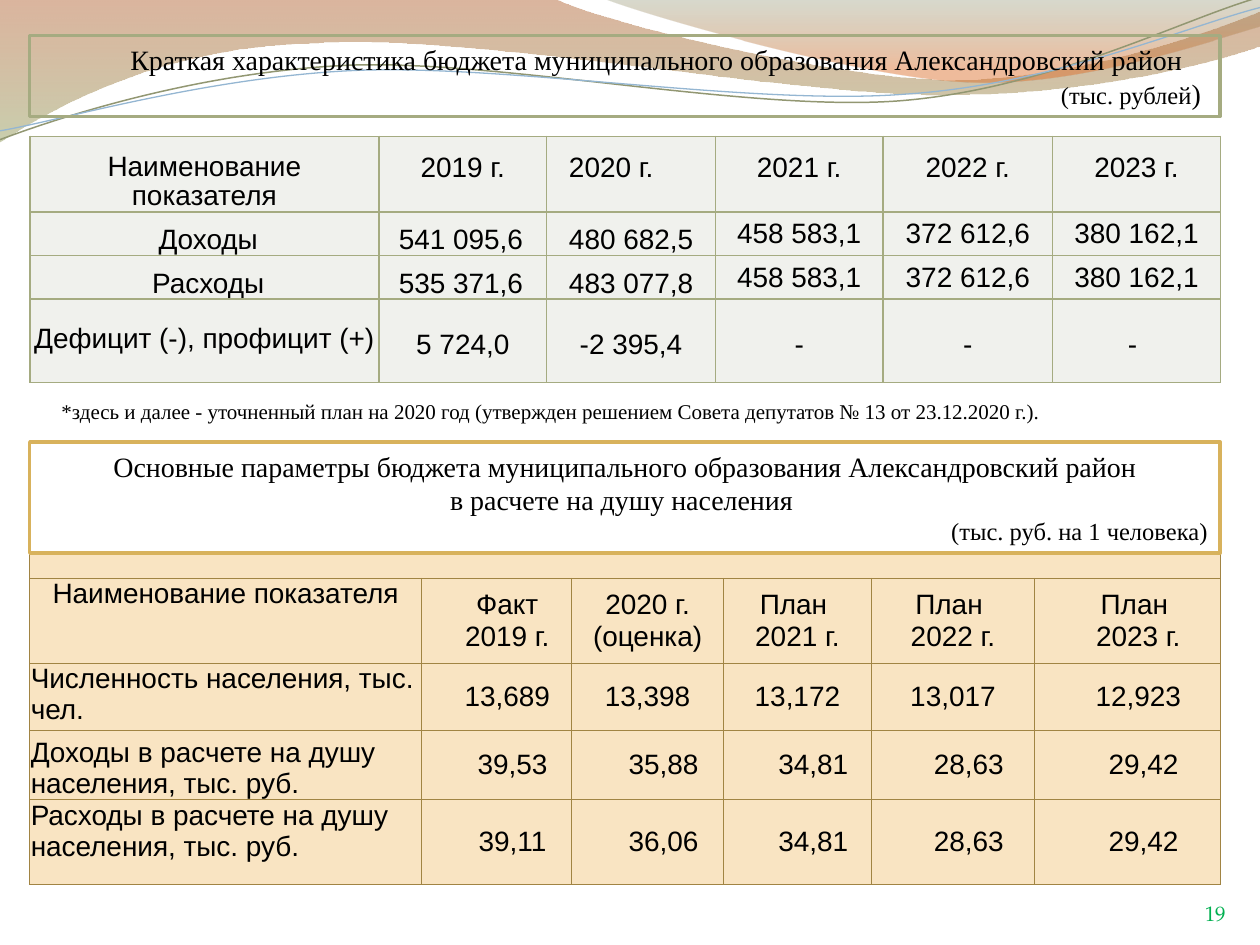
"""Builds the slide on the key budget figures of the Aleksandrovsky district."""
from lxml.etree import SubElement
from pptx import Presentation
from pptx.dml.color import RGBColor
from pptx.enum.shapes import MSO_SHAPE
from pptx.enum.text import MSO_ANCHOR, PP_ALIGN
from pptx.oxml.ns import qn
from pptx.util import Cm, Pt

BLACK = RGBColor(0x00, 0x00, 0x00)
WHITE = RGBColor(0xFF, 0xFF, 0xFF)
NUMBER_GREEN = RGBColor(0x00, 0xB0, 0x50)
SAGE = RGBColor(0xA5, 0xAB, 0x81)
SAGE_PALE = RGBColor(0xF0, 0xF1, 0xED)
GOLD = RGBColor(0xD8, 0xB2, 0x5C)
GOLD_DARK = RGBColor(0xA1, 0x84, 0x43)
GOLD_PALE = RGBColor(0xF9, 0xE4, 0xC2)
RUST = RGBColor(0xAF, 0x5C, 0x29)
MOSS = RGBColor(0x9D, 0xA6, 0x6B)
OLIVE = RGBColor(0x7D, 0x83, 0x5B)
ORANGE = RGBColor(0xDD, 0x6B, 0x24)
OLIVE_LINE = RGBColor(0x92, 0x97, 0x72)
BLUE_LINE = RGBColor(0x94, 0xB6, 0xD2)
SERIF = "Times New Roman"
LEFT, WIDTH = 0.6, 24.0


def write(frame, text, size=16, font="Arial", color=BLACK, align=PP_ALIGN.CENTER,
          indent=0, spacing=None, before=0, same_line=False):
    paragraph = frame.paragraphs[-1]
    if paragraph.runs and not same_line:
        paragraph = frame.add_paragraph()
        paragraph.space_before = Pt(before)
    paragraph.alignment = align
    paragraph.line_spacing = Pt(spacing) if spacing else None
    paragraph._p.get_or_add_pPr().set("marL", str(Cm(indent)))
    run = paragraph.add_run()
    run.text = text
    run.font.size, run.font.name = Pt(size), font
    run.font.color.rgb = color


def add_grid(top, widths, heights, border, border_width, fill):
    grid = slide.shapes.add_table(len(heights), len(widths), Cm(LEFT), Cm(top),
                                  Cm(sum(widths)), Cm(sum(heights))).table
    grid.first_row = grid.horz_banding = False
    for column, width in zip(grid.columns, widths):
        column.width = Cm(width)
    for row, height in zip(grid.rows, heights):
        row.height = Cm(height)
    for cell in grid.iter_cells():
        cell.margin_left = cell.margin_right = Cm(0.02)
        cell.margin_top = cell.margin_bottom = 0
        cell.vertical_anchor = MSO_ANCHOR.MIDDLE
        for side in ("a:lnL", "a:lnR", "a:lnT", "a:lnB"):
            edge = SubElement(cell._tc.get_or_add_tcPr(), qn(side), w=str(Pt(border_width)))
            SubElement(SubElement(edge, qn("a:solidFill")), qn("a:srgbClr"), val=str(border))
        cell.fill.solid()
        cell.fill.fore_color.rgb = fill
    return grid


presentation = Presentation()
presentation.slide_width, presentation.slide_height = Cm(25.4), Cm(19.05)
slide = presentation.slides.add_slide(presentation.slide_layouts[6])

waves = [
    ([(0, 0), (11.18, -0.03), (12.09, 0.43, 16.87, 1.6, 19.25, 1.6),
      (21.67, 1.6, 24.33, 0.66, 25.4, 0.23), (25.43, 0.91),
      (24.97, 1.12, 22.1, 1.93, 18.95, 1.91), (15.8, 1.91, 9.7, 0.71, 6.53, 0.86),
      (3.28, 0.91, 1.17, 2.11, -0.03, 2.87), (0, 0)],
     [(0, RUST, 45), (1, MOSS, 55)], None, 0),
    ([(12.17, -0.03), (12.93, 0.28, 17.32, 1.57, 19.53, 1.65),
      (21.74, 1.75, 24.41, 0.81, 25.4, 0.53), (25.4, 0), (12.17, -0.03)],
     [(0, OLIVE, 30), (0.8, ORANGE, 45)], None, 0),
    ([(-0.06, 2.22), (1.17, 1.82, 4.01, 1.04, 7.04, 1.05),
      (10.05, 1.07, 15.02, 2.37, 18.08, 2.29), (21.13, 2.2, 23.88, 0.91, 25.43, 0.55)],
     None, OLIVE_LINE, 0.85),
    ([(-0.05, 2.04), (1.14, 1.9, 4.17, 1.15, 7.19, 1.16),
      (10.24, 1.18, 15.14, 2.25, 18.19, 2.16), (21.23, 2.11, 23.95, 1.06, 25.46, 0.75)],
     None, BLUE_LINE, 0.75),
]
for segments, stops, line_color, line_width in waves:
    points = [(Cm(segment[i]), Cm(segment[i + 1]))
              for segment in segments for i in range(0, len(segment), 2)]
    builder = slide.shapes.build_freeform(*points[0])
    builder.add_line_segments(points[1:], close=bool(stops))
    wave = builder.convert_to_shape()
    straight_lines = iter(list(wave._element.iter(qn("a:lnTo"))))
    for segment in segments[1:]:
        curve = next(straight_lines)
        if len(segment) == 6:
            curve.tag = qn("a:cubicBezTo")
            for _ in range(2):
                following = next(straight_lines)
                curve.append(following[0])
                following.getparent().remove(following)
    wave.shadow.inherit = False
    if stops:
        wave.line.fill.background()
        wave.fill.gradient()
        wave.fill.gradient_angle = 270
        for stop, (position, color, opacity) in zip(wave.fill.gradient_stops, stops):
            stop.position, stop.color.rgb = position, color
            tint = stop._gs.find(qn("a:srgbClr"))
            SubElement(tint, qn("a:alpha"), val=str(opacity * 1000))
    else:
        wave.rotation = 357.3
        wave.fill.background()
        wave.line.color.rgb, wave.line.width = line_color, Pt(line_width)

page_number = slide.shapes.add_textbox(Cm(19.63), Cm(17.65), Cm(5.08), Cm(1.02)).text_frame
page_number.margin_left = page_number.margin_right = 0
page_number.margin_top = page_number.margin_bottom = 0
page_number.word_wrap = True
page_number.vertical_anchor = MSO_ANCHOR.BOTTOM
write(page_number, "19", size=12, font="TeX Gyre Pagella", color=NUMBER_GREEN,
      align=PP_ALIGN.RIGHT)

budget_rows = [
    ["Наименование\nпоказателя", "2019 г.", "2020 г.", "2021 г.", "2022 г.", "2023 г."],
    [" Доходы", "541 095,6", "480 682,5", "458 583,1", "372 612,6", "380 162,1"],
    [" Расходы", "535 371,6", "483 077,8", "458 583,1", "372 612,6", "380 162,1"],
    ["Дефицит (-), профицит (+)", "5 724,0", "-2 395,4", "-", "-", "- "],
]
budget = add_grid(2.75, [7.04, 3.38, 3.4, 3.38, 3.42, 3.38], [1.52, 0.88, 0.88, 1.68],
                  SAGE, 1, SAGE_PALE)
for r, values in enumerate(budget_rows):
    for c, value in enumerate(values):
        cell = budget.cell(r, c)
        amount = r in (1, 2)
        spacing = 11
        if r == 3:
            spacing = 22 if c else 16
        elif amount and c > 2:
            cell.vertical_anchor, spacing = MSO_ANCHOR.TOP, None
            cell.margin_top = Cm(0.13)
        elif amount or c == r == 0:
            cell.vertical_anchor = MSO_ANCHOR.BOTTOM
        indented = (amount and c in (1, 2)) or (r == 0 and c == 2)
        for line in value.split("\n"):
            write(cell.text_frame, line, spacing=spacing, before=6,
                  align=PP_ALIGN.LEFT if indented else PP_ALIGN.CENTER,
                  indent=(0.38 if c == 1 else 0.43) if indented else 0)

footnote = slide.shapes.add_textbox(Cm(0.99), Cm(7.9), Cm(23.83), Cm(0.76)).text_frame
footnote.word_wrap = True
write(footnote, "*здесь и далее - уточненный план на 2020 год (утвержден решением "
      "Совета депутатов № 13 от 23.12.2020 г.).", size=12, font=SERIF, align=PP_ALIGN.LEFT)

per_capita_rows = [
    ["Наименование показателя", "Факт 2019 г.", "2020 г.\n(оценка)", "План \n2021 г.",
     "План \n2022 г.", "План \n2023 г."],
    ["Численность населения, тыс. чел.", "13,689", "13,398", "13,172", "13,017", "12,923"],
    ["Доходы в расчете на душу населения, тыс. руб.",
     "39,53", "35,88", "34,81", "28,63", "29,42"],
    ["Расходы в расчете на душу населения, тыс. руб.",
     "39,11", "36,06", "34,81", "28,63", "29,42"],
]
per_capita = add_grid(11.13, [7.9, 3.02, 3.07, 2.97, 3.3, 3.74],
                      [0.53, 1.71, 1.35, 1.4, 1.7], GOLD_DARK, 0.75, GOLD_PALE)
per_capita.cell(0, 0).merge(per_capita.cell(0, 5))
for c in range(6):
    SubElement(per_capita.cell(0, c).text_frame.paragraphs[0]._p, qn("a:endParaRPr"), sz="1000")
for r, values in enumerate(per_capita_rows, start=1):
    for c, value in enumerate(values):
        cell = per_capita.cell(r, c)
        if c == 0:
            cell.vertical_anchor = MSO_ANCHOR.BOTTOM if r == 3 else MSO_ANCHOR.TOP
            indent = 0
        elif r > 2:
            indent = 0.64
        else:
            indent = 0.43 if c in (1, 5) else 0
        for line in value.split("\n"):
            write(cell.text_frame, line, indent=indent,
                  align=PP_ALIGN.LEFT if c == 0 and r > 1 else PP_ALIGN.CENTER)

headings = []
for top, height, border, fill in [(0.72, 1.63, SAGE, None), (8.91, 2.24, GOLD, WHITE)]:
    box = slide.shapes.add_shape(MSO_SHAPE.RECTANGLE, Cm(LEFT), Cm(top), Cm(WIDTH), Cm(height))
    box.shadow.inherit = False
    box.line.color.rgb, box.line.width = border, Pt(2)
    if fill is None:
        box.fill.background()
    else:
        box.fill.solid()
        box.fill.fore_color.rgb = fill
    box.text_frame.word_wrap = True
    box.text_frame.vertical_anchor = MSO_ANCHOR.MIDDLE
    headings.append(box.text_frame)

summary, parameters = headings
write(summary, "Краткая характеристика бюджета муниципального образования Александровский район",
      font=SERIF, indent=1.27)
write(summary, "(тыс. рублей", size=14, font=SERIF, align=PP_ALIGN.RIGHT, indent=1.27)
write(summary, ") ", font=SERIF, align=PP_ALIGN.RIGHT, indent=1.27, same_line=True)
write(parameters, "Основные параметры бюджета муниципального образования Александровский район",
      font=SERIF)
write(parameters, "в расчете на душу населения ", font=SERIF)
write(parameters, "(тыс. руб. на 1 человека)", size=14, font=SERIF, align=PP_ALIGN.RIGHT)

presentation.save("out.pptx")
